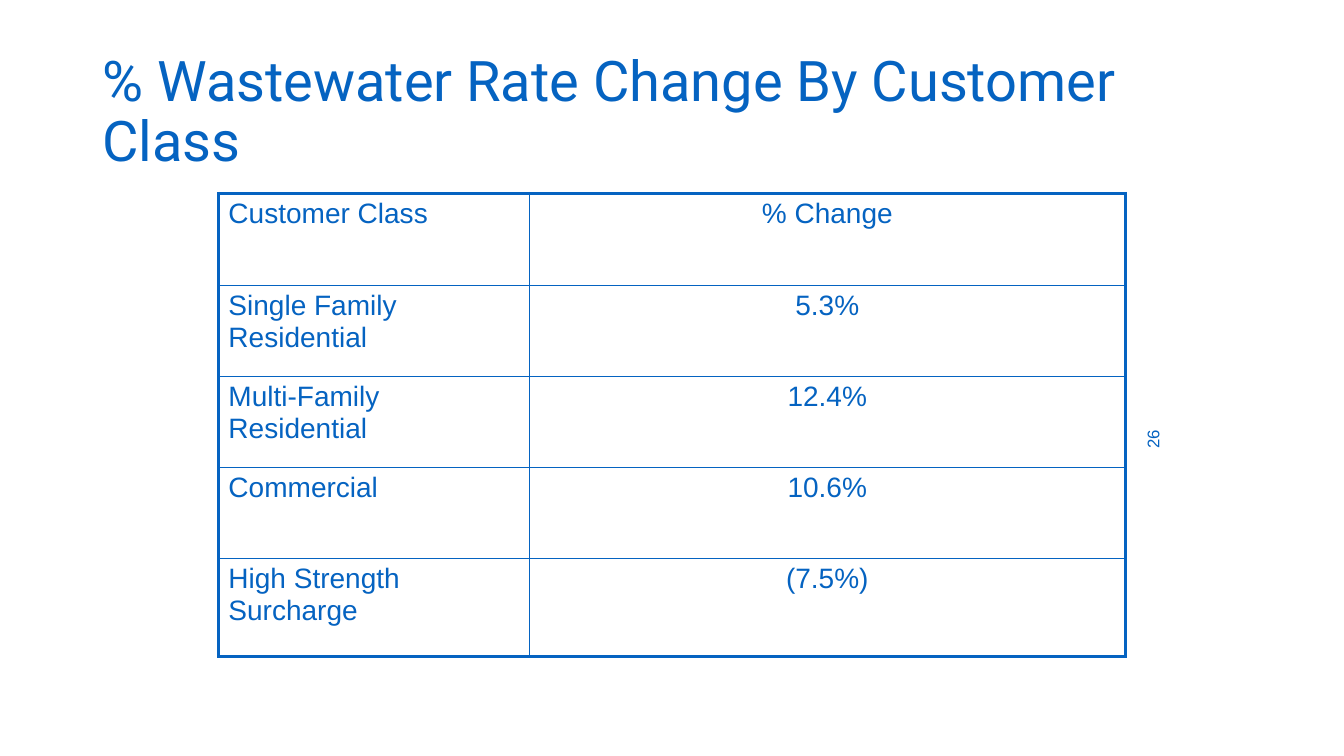
from lxml import etree
from pptx import Presentation
from pptx import util as u
from pptx.dml.color import RGBColor
from pptx.enum import text
from pptx.oxml.ns import qn

COLORS = {"blue": "0563C1", "white": "FFFFFF"}
ALIGN, ANCHOR = text.PP_ALIGN, text.MSO_ANCHOR


class RateSlide:
    """Holds the style and the current slide."""

    thick, thin = 2.25, 1

    def __init__(self, prs):
        self.s = prs.slides.add_slide(prs.slide_layouts[5])
        fill = self.s.background.fill
        fill.solid()
        fill.fore_color.rgb = RGBColor.from_string(COLORS["white"])

    def place(self, sp, x, y, w, h):
        box = {"left": x, "top": y, "width": w, "height": h}
        for name, value in box.items():
            setattr(sp, name, u.Pt(value))

    def add_text(self, tf, words, size, font="Arial", **para):
        p = tf.paragraphs[0]
        for name, value in para.items():
            setattr(p, name, value)
        r = p.add_run()
        r.text = words
        for name, value in {"name": font, "size": u.Pt(size), "bold": False}.items():
            setattr(r.font, name, value)
        r.font.color.rgb = RGBColor.from_string(COLORS["blue"])

    def title(self, words, *box):
        sp = self.s.shapes.title
        self.place(sp, *box)
        tf = sp.text_frame
        for name, value in {"word_wrap": True, "vertical_anchor": ANCHOR.MIDDLE,
                            "auto_size": text.MSO_AUTO_SIZE.NONE}.items():
            setattr(tf, name, value)
        self.add_text(tf, words, 40, "Roboto", alignment=ALIGN.LEFT, line_spacing=0.9)

    def borders(self, cell, widths):
        tcPr = cell._tc.get_or_add_tcPr()
        for i, (side, width) in enumerate(widths.items()):
            ln = etree.Element(qn(f"a:ln{side}"), w=str(u.Pt(width)))
            fill = etree.SubElement(ln, qn("a:solidFill"))
            etree.SubElement(fill, qn("a:srgbClr"), val=COLORS["blue"])
            tcPr.insert(i, ln)

    def table(self, rows, x, y, widths, heights):
        frame = self.s.shapes.add_table(len(rows), len(widths), *map(
            u.Pt, (x, y, sum(widths), sum(heights))))
        tbl = frame.table
        tbl.first_row = tbl.horz_banding = False
        for col, width in zip(tbl.columns, widths):
            col.width = u.Pt(width)
        for row, height in zip(tbl.rows, heights):
            row.height = u.Pt(height)
        last_row, last_col = len(rows) - 1, len(widths) - 1
        for i, row in enumerate(rows):
            for j, words in enumerate(row):
                cell = tbl.cell(i, j)
                cell.fill.background()
                # Thick lines on the outer edge, thin ones inside
                edges = {"L": j == 0, "R": j == last_col,
                         "T": i == 0, "B": i == last_row}
                self.borders(cell, {side: self.thick if outer else self.thin
                                    for side, outer in edges.items()})
                self.add_text(cell.text_frame, words, 20,
                              alignment=ALIGN.CENTER if j else ALIGN.LEFT)

    def page_number(self, words, *box):
        sp = self.s.shapes.add_textbox(*map(u.Pt, box))
        sp.rotation = 270
        tf = sp.text_frame
        tf.word_wrap = True
        tf.vertical_anchor = ANCHOR.BOTTOM
        self.add_text(tf, words, 12, alignment=ALIGN.RIGHT)


def main():
    prs = Presentation()
    prs.slide_width, prs.slide_height = u.Pt(960), u.Pt(540)
    slide = RateSlide(prs)

    # Title
    slide.title("% Wastewater Rate Change By Customer Class", 66, 28.8, 828, 104.4)

    # Rate changes
    rates = [
        ("Customer Class", "% Change"),
        ("Single Family Residential", "5.3%"),
        ("Multi-Family Residential", "12.4%"),
        ("Commercial", "10.6%"),
        ("High Strength Surcharge", "(7.5%)"),
    ]
    slide.table(rates, 156, 138, widths=(222, 426), heights=(66, 65, 65, 65, 70))

    # Page number, turned to read upwards
    slide.page_number("26", 807, 303, 30, 24)

    prs.save("out.pptx")


if __name__ == "__main__":
    main()
